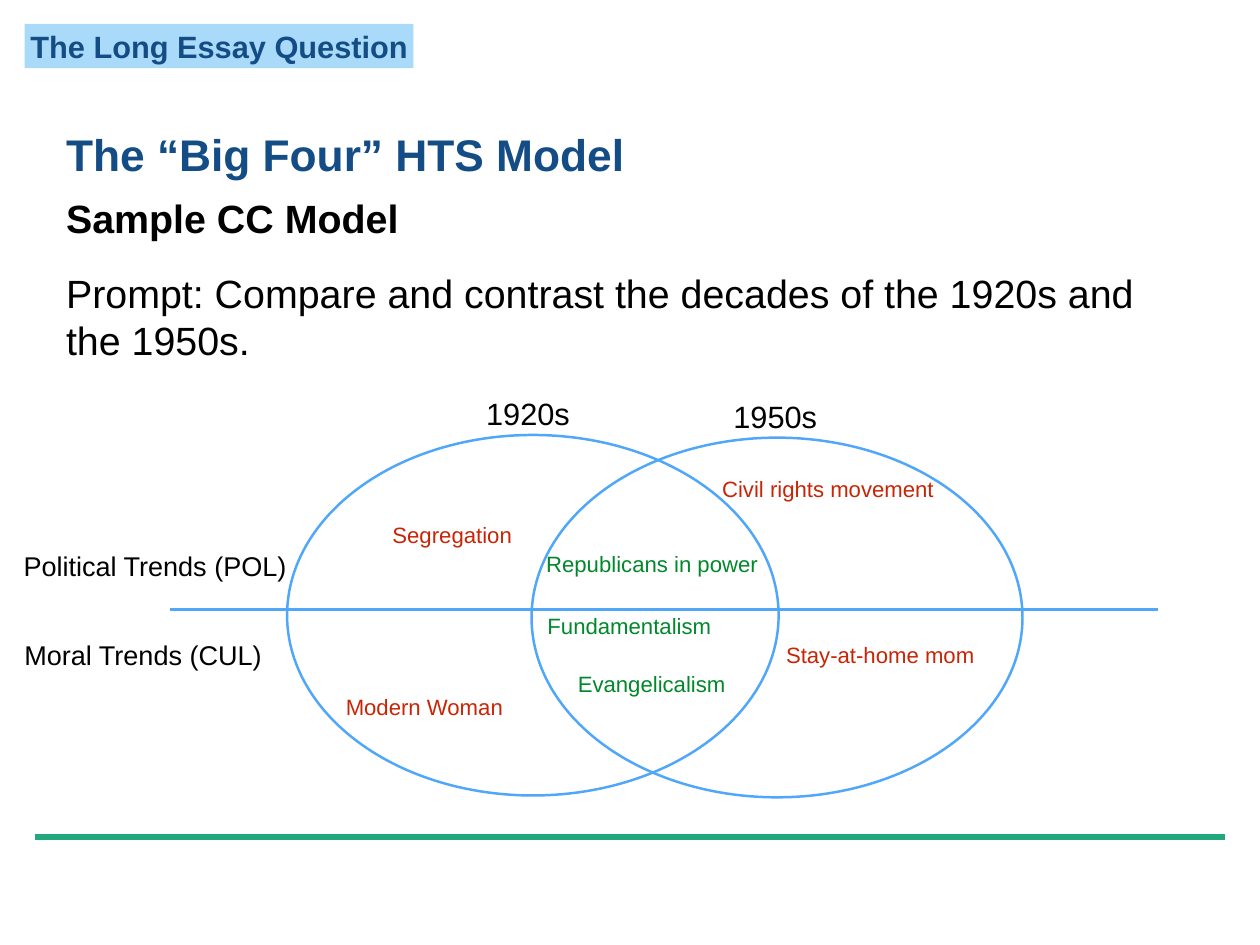
from lxml import etree
from pptx import Presentation
from pptx.dml.color import RGBColor
from pptx.enum import shapes, text
from pptx.oxml import ns
from pptx.util import Pt

COLORS = {
    "navy": "144D85", "sky": "AADAF9", "teal": "21A87E", "blue": "50A7F9",
    "black": "000000", "shared": "00882B", "distinct": "C82506",
}
CENTER, LEFT = text.PP_ALIGN.CENTER, text.PP_ALIGN.LEFT
DECADES = [
    ("1920s", (233.3, 353.5, 399.5, 293), (377.3, 311)),
    ("1950s", (432, 355.7, 399, 292.3), (578.2, 313.2)),
]
TRENDS = [
    ("Political Trends (POL)", (14.4, 442.8, 223.2, 33.1)),
    ("Moral Trends (CUL)", (15.1, 515.5, 202.3, 33.1)),
]
NOTES = [
    ("Fundamentalism", "shared", 440.6, 494.6, 141.8),
    ("Evangelicalism", "shared", 465.1, 541.4, 128.9),
    ("Modern Woman", "distinct", 276.5, 560.2, 136.8),
    ("Stay-at-home mom", "distinct", 634.3, 517.7, 162),
    ("Republicans in power", "shared", 439.2, 444.2, 181.4),
    ("Segregation", "distinct", 314.6, 420.5, 105.8),
    ("Civil rights movement", "distinct", 582.5, 383, 180.7),
]


def color(name):
    """Return the named colour."""
    return RGBColor.from_string(COLORS[name])


def place(shape, area):
    """Move and size a shape, in points."""
    shape.left, shape.top, shape.width, shape.height = map(Pt, area)


def write(shape, words, size=18, ink="black", bold=False, align=CENTER,
          anchor=text.MSO_ANCHOR.MIDDLE, wrap=False):
    """Fill a shape with one formatted paragraph."""
    frame = shape.text_frame
    frame.auto_size = text.MSO_AUTO_SIZE.NONE
    frame.word_wrap = wrap
    frame.vertical_anchor = anchor
    frame.margin_left = frame.margin_right = Pt(4)
    frame.margin_top = frame.margin_bottom = Pt(4)
    para = frame.paragraphs[0]
    para.alignment = align
    span = para.add_run()
    span.text = words
    span.font.name = "Arial"
    span.font.size = Pt(size)
    span.font.bold = bold
    span.font.color.rgb = color(ink)


def add_label(page, words, area, **style):
    """Add a text box."""
    write(page.shapes.add_textbox(*map(Pt, area)), words, **style)


def add_rule(page, left, right, height, ink, weight):
    """Add a horizontal line."""
    rule = page.shapes.add_connector(
        shapes.MSO_CONNECTOR.STRAIGHT, Pt(left), Pt(height), Pt(right), Pt(height))
    rule.line.color.rgb = color(ink)
    rule.line.width = Pt(weight)
    etree.SubElement(rule._element.spPr, ns.qn("a:effectLst"))


def add_banner(page, words, area):
    """Add the filled section banner."""
    banner = page.shapes.add_shape(shapes.MSO_SHAPE.RECTANGLE, *map(Pt, area))
    banner.shadow.inherit = False
    banner.fill.solid()
    banner.fill.fore_color.rgb = color("sky")
    banner.line.fill.background()
    write(banner, words, size=25, ink="navy", bold=True)


def add_decade(page, name, area, corner):
    """Add one Venn ellipse with its heading."""
    ring = page.shapes.add_shape(shapes.MSO_SHAPE.OVAL, *map(Pt, area))
    ring.shadow.inherit = False
    ring.fill.background()
    ring.line.color.rgb = color("blue")
    ring.line.width = Pt(2)
    add_label(page, name, (*corner, 103.7, 49.7), size=25)


def main():
    """Build and save the slide."""
    deck = Presentation()
    deck.slide_width, deck.slide_height = Pt(1024), Pt(768)
    page = deck.slides.add_slide(deck.slide_layouts.get_by_name("Title Only"))

    add_banner(page, "The Long Essay Question", (20, 19.5, 316, 36))
    add_rule(page, 28.8, 995.8, 680.4, "teal", 5)
    title = page.shapes.title
    place(title, (49.7, 100.1, 463, 49))
    write(title, "The “Big Four” HTS Model", size=36, ink="navy", bold=True, align=LEFT)
    add_label(page, "Sample CC Model", (49.7, 154.8, 279.4, 43.9),
              size=32, bold=True, align=LEFT)
    add_label(page, "Prompt: Compare and contrast the decades of the 1920s and the 1950s.",
              (49.7, 214.6, 925.2, 80.6), size=32, align=LEFT,
              anchor=text.MSO_ANCHOR.TOP, wrap=True)

    for name, area, corner in DECADES:
        add_decade(page, name, area, corner)
    add_rule(page, 138.2, 941, 495.4, "blue", 2)
    for words, area in TRENDS:
        add_label(page, words, area, size=22)
    for words, ink, left, top, width in NOTES:
        add_label(page, words, (left, top, width, 28.1), ink=ink)

    deck.save("out.pptx")


if __name__ == "__main__":
    main()
